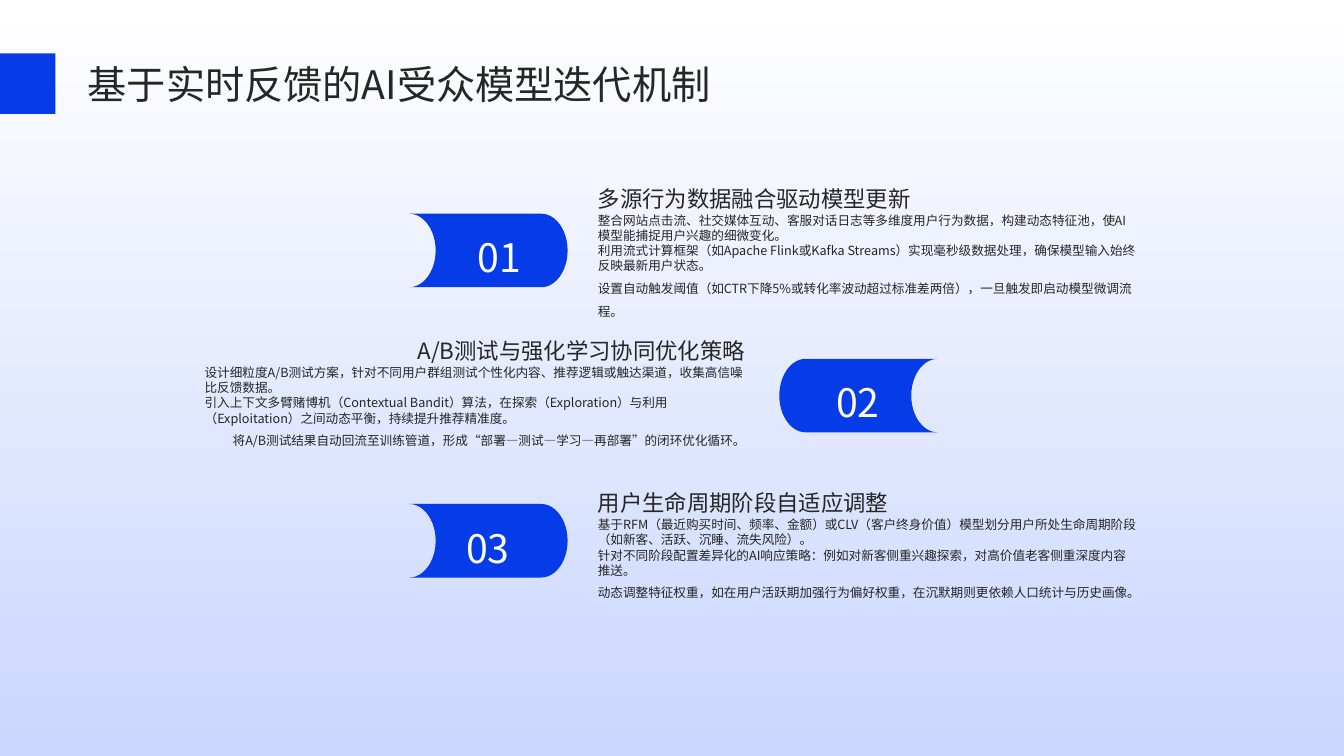
from dataclasses import dataclass

from lxml import etree
from pptx import Presentation
from pptx.dml.color import RGBColor
from pptx.enum import shapes, text
from pptx.oxml.ns import qn
from pptx.util import Inches, Pt

LEFT, MID, RIGHT = text.PP_ALIGN.LEFT, text.PP_ALIGN.CENTER, text.PP_ALIGN.RIGHT
TOP, CENTER, BOTTOM = (text.MSO_ANCHOR.TOP, text.MSO_ANCHOR.MIDDLE,
                       text.MSO_ANCHOR.BOTTOM)
FORM = shapes.MSO_SHAPE


@dataclass(frozen=True)
class Theme:
    font: str = "Noto Sans CJK SC"
    blue: str = "063CE8"
    pale: str = "CAD6FE"
    white: str = "FFFFFF"
    ink: str = "262626"
    big: int = 28
    head: int = 16
    body: int = 9


@dataclass(frozen=True)
class Box:
    left: float
    top: float
    width: float
    height: float

    def emu(self) -> list:
        return [Inches(n) for n in (self.left, self.top, self.width, self.height)]


@dataclass(frozen=True)
class Step:
    tab: float      # left edge of the blue tab
    label: float    # left edge of the number
    column: float   # left edge of the text
    align: int
    head: str
    lines: tuple


THEME = Theme()
TITLE = "基于实时反馈的AI受众模型迭代机制"
STEPS = (
    Step(4.06, 4.47, 5.93, LEFT, "多源行为数据融合驱动模型更新", (
        "整合网站点击流、社交媒体互动、客服对话日志等多维度用户行为数据，构建动态特征池，使AI模型能捕捉用户兴趣的细微变化。",
        "利用流式计算框架（如Apache Flink或Kafka Streams）实现毫秒级数据处理，确保模型输入始终反映最新用户状态。",
        "设置自动触发阈值（如CTR下降5%或转化率波动超过标准差两倍），一旦触发即启动模型微调流程。")),
    Step(7.73, 8.03, 2.03, RIGHT, "A/B测试与强化学习协同优化策略", (
        "设计细粒度A/B测试方案，针对不同用户群组测试个性化内容、推荐逻辑或触达渠道，收集高信噪比反馈数据。",
        "引入上下文多臂赌博机（Contextual Bandit）算法，在探索（Exploration）与利用（Exploitation）之间动态平衡，持续提升推荐精准度。",
        "将A/B测试结果自动回流至训练管道，形成“部署—测试—学习—再部署”的闭环优化循环。")),
    Step(4.06, 4.36, 5.93, LEFT, "用户生命周期阶段自适应调整", (
        "基于RFM（最近购买时间、频率、金额）或CLV（客户终身价值）模型划分用户所处生命周期阶段（如新客、活跃、沉睡、流失风险）。",
        "针对不同阶段配置差异化的AI响应策略：例如对新客侧重兴趣探索，对高价值老客侧重深度内容推送。",
        "动态调整特征权重，如在用户活跃期加强行为偏好权重，在沉默期则更依赖人口统计与历史画像。")),
)


def style(para, size: int, color: str, align: int, gap: float) -> None:
    para.alignment, para.line_spacing = align, gap
    font = para.font
    font.size, font.name = Pt(size), THEME.font
    font.color.rgb = RGBColor.from_string(color)
    # East Asian glyphs take their own typeface entry
    east = etree.SubElement(para._p.pPr.find(qn("a:defRPr")), qn("a:ea"))
    east.set("typeface", THEME.font)


def frame(shape, anchor: int):
    """Clear the insets and return the wrapped text frame."""
    area = shape.text_frame
    area.margin_left = area.margin_right = area.margin_top = area.margin_bottom = 0
    area.word_wrap, area.vertical_anchor = True, anchor
    area.auto_size = text.MSO_AUTO_SIZE.NONE
    return area


def write(slide, box: Box, words: str, size: int, color: str, align: int,
          anchor: int) -> None:
    area = frame(slide.shapes.add_textbox(*box.emu()), anchor)
    area.text = words
    style(area.paragraphs[0], size, color, align, 1.3)


def block(slide, kind: int, box: Box):
    shape = slide.shapes.add_shape(kind, *box.emu())
    shape.shadow.inherit = False
    shape.fill.solid()
    shape.fill.fore_color.rgb = RGBColor.from_string(THEME.blue)
    shape.line.fill.background()
    return shape


def backdrop(slide) -> None:
    shape = block(slide, FORM.RECTANGLE, Box(0, 0, 13.33, 7.5))
    shape.fill.gradient()
    shape.fill.gradient_angle = 270
    for stop, color in zip(shape.fill.gradient_stops, (THEME.white, THEME.pale)):
        stop.color.rgb = RGBColor.from_string(color)
    slide.shapes._spTree.insert(2, shape._element)  # behind the title


def heading(slide) -> None:
    title = slide.shapes.title
    title.left, title.top, title.width, title.height = Box(0.87, 0.55, 11.88, 0.51).emu()
    area = frame(title, CENTER)
    area.text = TITLE
    style(area.paragraphs[0], THEME.big, THEME.ink, LEFT, 1.1)
    block(slide, FORM.RECTANGLE, Box(0, 0.53, 0.55, 0.6))


def detail(slide, box: Box, step: Step) -> None:
    """Tight left-set lines, then an open closing line on the step's side."""
    area = frame(slide.shapes.add_textbox(*box.emu()), TOP)
    area.text = "\n".join(step.lines)
    *tight, last = area.paragraphs
    for para in tight:
        style(para, THEME.body, THEME.ink, LEFT, 1.0)
    style(last, THEME.body, THEME.ink, step.align, 1.5)


def draw(slide, index: int, step: Step) -> None:
    row, top = 2.12 + 1.44 * index, 1.69 + 1.51 * index
    tab = block(slide, FORM.FLOWCHART_STORED_DATA, Box(step.tab, row, 1.57, 0.73))
    if step.align == LEFT:
        tab._element.spPr.find(qn("a:xfrm")).set("flipH", "1")
    write(slide, Box(step.label, row - 0.05, 0.96, 0.82), f"{index + 1:02}",
          THEME.big, THEME.white, MID, CENTER)
    write(slide, Box(step.column, top, 5.36, 0.41), step.head,
          THEME.head, THEME.ink, step.align, BOTTOM)
    detail(slide, Box(step.column, top + 0.42, 5.36, 1.12), step)


def main() -> None:
    deck = Presentation()
    deck.slide_width, deck.slide_height = Inches(13.33), Inches(7.5)
    slide = deck.slides.add_slide(deck.slide_layouts[5])
    backdrop(slide)
    heading(slide)
    for index, step in enumerate(STEPS):
        draw(slide, index, step)
    deck.save("out.pptx")


if __name__ == "__main__":
    main()
